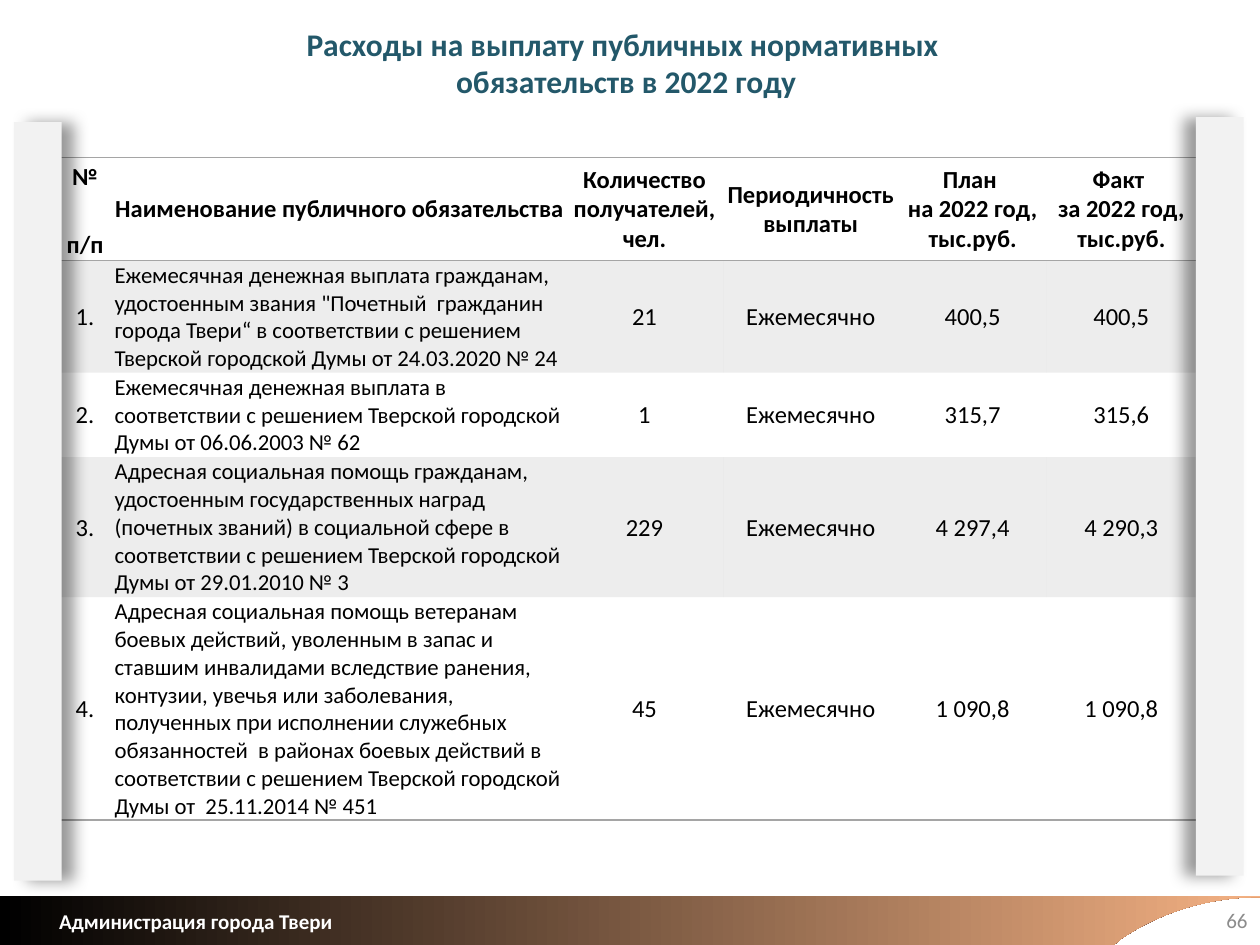
from lxml import etree
from pptx import Presentation
from pptx.dml.color import RGBColor
from pptx.enum import shapes, text
from pptx.oxml import ns
from pptx.util import Inches, Pt

# Content
TITLE = "Расходы на выплату публичных нормативных \nобязательств в 2022 году"
FOOTER = "Администрация города Твери"
PAGE = "66"
HEADER = ["№\n п/п", "Наименование публичного обязательства",
          "Количество получателей, чел.", "Периодичность выплаты",
          "План \nна 2022 год, тыс.руб.", "Факт \nза 2022 год, тыс.руб."]
OBLIGATIONS = [
    ("Ежемесячная денежная выплата гражданам, удостоенным звания \"Почетный  "
     "гражданин города Твери“ в соответствии с решением Тверской городской Думы "
     "от 24.03.2020 № 24", "21", "400,5", "400,5"),
    ("Ежемесячная денежная выплата в соответствии с решением Тверской городской "
     "Думы от 06.06.2003 № 62", "1", "315,7", "315,6"),
    ("Адресная социальная помощь гражданам, удостоенным государственных наград "
     "(почетных званий) в социальной сфере в соответствии с решением Тверской "
     "городской Думы от 29.01.2010 № 3", "229", "4 297,4", "4 290,3"),
    ("Адресная социальная помощь ветеранам боевых действий, уволенным в запас и "
     "ставшим инвалидами вследствие ранения, контузии, увечья или заболевания, "
     "полученных при исполнении служебных обязанностей  в районах боевых действий "
     "в соответствии с решением Тверской городской Думы от  25.11.2014 № 451",
     "45", "1 090,8", "1 090,8"),
]
PERIOD = "Ежемесячно"

THEME = {
    "font": "Calibri", "title": "23586A", "ink": "000000", "white": "FFFFFF",
    "muted": "8C8C8C", "rule": "A5A5A5", "panel": "F2F2F2", "copper": "F4B183",
    "title_size": 18, "table_size": 14, "name_size": 13, "footer_size": 12,
}
NO_STYLE = "{2D5ABB26-0587-4C30-8999-92F81FD0307C}"
COLUMNS = [0.45, 3.59, 1.25, 1.39, 1.18, 1.18]
ROW_HEIGHT = 0.41  # rows grow to fit their text
LEFT, WIDTH = 0.45, sum(COLUMNS)
ALIGN = text.PP_ALIGN


def write(frame, words, size, color=THEME["ink"], bold=False, align=ALIGN.LEFT,
          line_spacing=None, space=None):
    for i, line in enumerate(words.split("\n")):
        para = frame.paragraphs[0] if i == 0 else frame.add_paragraph()
        para.alignment = align
        if line_spacing:
            para.line_spacing = line_spacing
        if space is not None:
            para.space_before = para.space_after = Pt(space)
        run = para.add_run()
        run.text = line
        run.font.name, run.font.size, run.font.bold = THEME["font"], Pt(size), bold
        run.font.color.rgb = RGBColor.from_string(color)


def add_xml(parent, tag, **attributes):
    return etree.SubElement(parent, ns.qn(tag), attributes)


def box(at):
    return [Inches(v) for v in at]


def add_border(cell, side):
    properties = cell._tc.get_or_add_tcPr()
    line = add_xml(properties, "a:ln" + side, w=str(Pt(1)))
    add_xml(add_xml(line, "a:solidFill"), "a:srgbClr", val=THEME["rule"])


def add_panel(slide, at, direction):
    panel = slide.shapes.add_shape(shapes.MSO_SHAPE.RECTANGLE, *box(at))
    panel.shadow.inherit = False
    panel.fill.solid()
    panel.fill.fore_color.rgb = RGBColor.from_string(THEME["panel"])
    panel.line.fill.background()
    effects = panel._element.spPr.find(ns.qn("a:effectLst"))
    shadow = add_xml(effects, "a:outerShdw", blurRad=str(Pt(9)), dist=str(Pt(7)),
                     dir=str(direction * 60000), algn="ctr", rotWithShape="0")
    add_xml(add_xml(shadow, "a:srgbClr", val=THEME["ink"]), "a:alpha", val="40000")


def bezier(start, control1, control2, end, steps=24):
    for i in range(1, steps + 1):
        t = i / steps
        yield tuple((1 - t) ** 3 * a + 3 * (1 - t) ** 2 * t * b
                    + 3 * (1 - t) * t ** 2 * c + t ** 3 * d
                    for a, b, c, d in zip(start, control1, control2, end))


def add_obligations_table(slide):
    frame = slide.shapes.add_table(
        len(OBLIGATIONS) + 1, len(COLUMNS),
        *box((LEFT, 1.25, WIDTH, ROW_HEIGHT * (len(OBLIGATIONS) + 1))))
    table = frame.table
    table.first_row = table.horz_banding = False
    table._tbl.tblPr.find(ns.qn("a:tableStyleId")).text = NO_STYLE
    for column, width in zip(table.columns, COLUMNS):
        column.width = Inches(width)

    rows = [HEADER] + [(f"{n}.", name, people, PERIOD, plan, fact)
                       for n, (name, people, plan, fact) in enumerate(OBLIGATIONS, 1)]
    for r, row in enumerate(rows):
        table.rows[r].height = Inches(ROW_HEIGHT)
        for c, words in enumerate(row):
            cell = table.cell(r, c)
            header, name = r == 0, r > 0 and c == 1
            corner = header and c == 0
            side, top = (0.06, 0) if corner else (0.01, 0.01)
            cell.margin_left = cell.margin_right = Inches(side)
            cell.margin_top, cell.margin_bottom = Inches(top), 0
            cell.vertical_anchor = text.MSO_ANCHOR.MIDDLE
            write(cell.text_frame, words,
                  THEME["name_size" if name else "table_size"], bold=header,
                  align=ALIGN.LEFT if name else ALIGN.CENTER,
                  line_spacing=1.15 if corner else None,
                  space=6 if name and r == 1 else None)
            # Borders come before the fill in the cell properties
            if header:
                add_border(cell, "T")
            if header or r == len(rows) - 1:
                add_border(cell, "B")
            if r % 2:
                cell.fill.solid()
                cell.fill.fore_color.rgb = RGBColor.from_string(THEME["rule"])
                tint = cell._tc.tcPr.find(".//" + ns.qn("a:srgbClr"))
                add_xml(tint, "a:alpha", val="20000")
            else:
                cell.fill.background()


def add_footer(slide):
    curve_start, curve_end = (10, 7.12), (8.9, 7.45)
    points = [(10, 7.11), curve_start,
              *bezier(curve_start, (9.59, 7.12), (9.21, 7.24), curve_end),
              (8.84, 7.5), (0, 7.5)]
    outline = slide.shapes.build_freeform(0, Inches(7.11))
    outline.add_line_segments([box(p) for p in points], close=True)
    band = outline.convert_to_shape()
    band.shadow.inherit = False
    band.line.fill.background()
    band.fill.gradient()
    band.fill.gradient_angle = 0
    for stop, color, position in zip(band.fill.gradient_stops,
                                     (THEME["ink"], THEME["copper"]), (0, 1)):
        stop.color.rgb = RGBColor.from_string(color)
        stop.position = position

    owner = slide.shapes.add_textbox(*box((0.37, 7.16, 2.39, 0.3))).text_frame
    owner.word_wrap = False
    owner.auto_size = text.MSO_AUTO_SIZE.SHAPE_TO_FIT_TEXT
    write(owner, FOOTER, THEME["footer_size"], color=THEME["white"], bold=True)

    number = slide.shapes.add_textbox(*box((7.75, 7.1, 2.25, 0.4))).text_frame
    number.word_wrap = True
    number.vertical_anchor = text.MSO_ANCHOR.MIDDLE
    write(number, PAGE, THEME["footer_size"], color=THEME["muted"], align=ALIGN.RIGHT)


def main():
    deck = Presentation()
    deck.slide_width, deck.slide_height = Inches(10), Inches(7.5)
    slide = deck.slides.add_slide(deck.slide_layouts[5])

    # Title
    title = slide.shapes.title
    title.left, title.top, title.width, title.height = box((LEFT, 0.17, WIDTH, 0.65))
    title.text_frame.auto_size = text.MSO_AUTO_SIZE.NONE
    title.text_frame.vertical_anchor = text.MSO_ANCHOR.MIDDLE
    write(title.text_frame, TITLE, THEME["title_size"], color=THEME["title"],
          bold=True, align=ALIGN.CENTER)

    # Table between two shaded side panels
    add_obligations_table(slide)
    add_panel(slide, (LEFT + WIDTH, 0.93, 0.38, 6.02), direction=180)
    add_panel(slide, (0.11, 0.97, 0.38, 6.02), direction=0)

    # Footer band
    add_footer(slide)
    deck.save("out.pptx")


if __name__ == "__main__":
    main()
